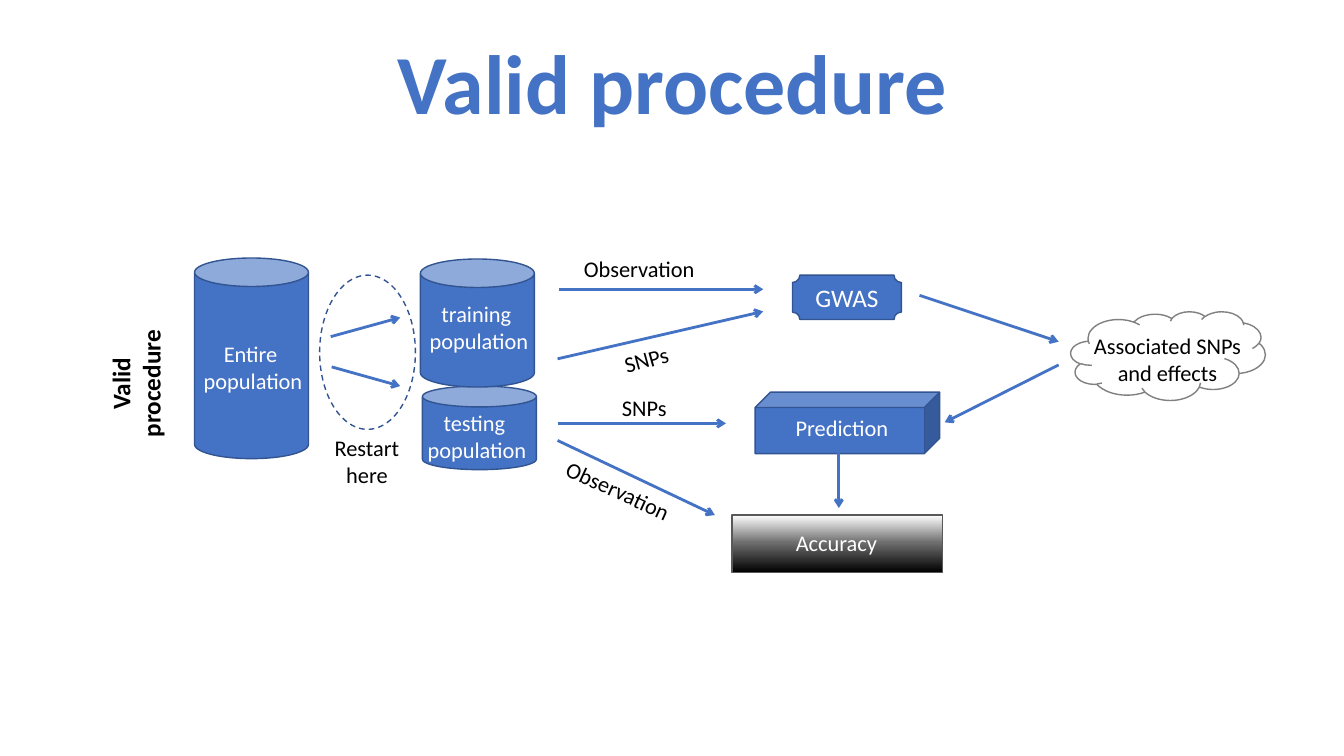
from copy import deepcopy
from dataclasses import dataclass

from pptx import Presentation
from pptx.dml.color import RGBColor
from pptx.enum.dml import MSO_LINE as Dash
from pptx.enum.shapes import MSO_CONNECTOR as Connector, MSO_SHAPE as Shape
from pptx.enum.text import MSO_ANCHOR as Anchor, MSO_AUTO_SIZE as AutoSize, PP_ALIGN as Align
from pptx.oxml.ns import qn
from pptx.oxml.xmlchemy import OxmlElement
from pptx.util import Inches, Pt


@dataclass(frozen=True)
class Theme:
    font: str = "Calibri"
    blue: str = "4472C4"
    outline: str = "325491"
    cloud_line: str = "808080"
    box_line: str = "595959"
    white: str = "FFFFFF"
    black: str = "000000"
    fade: tuple = ((0, "FFFFFF"), (0.48, "6E6E6E"), (1, "000000"))
    title: int = 60
    heading: int = 18
    label: int = 16
    arrow_width: int = 2
    outline_width: int = 1


def rgb(value):
    return RGBColor.from_string(value)


def apply(target, values):
    for name, value in values.items():
        setattr(target, name, value)


class Diagram:
    """Draws styled elements on the current slide."""

    def __init__(self, slide, theme):
        self.shapes = slide.shapes
        self.theme = theme

    def fill_text(self, frame, lines, color, size=None, bold=False, spacing=None, **frame_format):
        apply(frame, {"word_wrap": True, **frame_format})
        for index, line in enumerate(lines.split("\n")):
            paragraph = frame.add_paragraph() if index else frame.paragraphs[0]
            apply(paragraph, {"alignment": Align.CENTER, "line_spacing": spacing})
            run = paragraph.add_run()
            run.text = line
            apply(run.font, {"name": self.theme.font, "size": Pt(size or self.theme.label),
                             "bold": bold})
            run.font.color.rgb = rgb(color)

    def label(self, box, lines, color=None, rotation=0, **text_format):
        text_box = self.shapes.add_textbox(*map(Inches, box))
        text_box.rotation = rotation
        options = {"auto_size": AutoSize.SHAPE_TO_FIT_TEXT, **text_format}
        self.fill_text(text_box.text_frame, lines, color or self.theme.black, **options)

    def shape(self, kind, box, fill=None, line=None, dash=None):
        """Without a fill colour the shape stays see-through."""
        shape = self.shapes.add_shape(kind, *map(Inches, box))
        shape.shadow.inherit = False
        if fill:
            shape.fill.solid()
            shape.fill.fore_color.rgb = rgb(fill)
        else:
            shape.fill.background()
        shape.line.color.rgb = rgb(line or self.theme.outline)
        apply(shape.line, {"width": Pt(self.theme.outline_width), "dash_style": dash})
        return shape

    def fading_box(self, box):
        shape = self.shape(Shape.RECTANGLE, box, line=self.theme.box_line)
        shape.fill.gradient()
        shape.fill.gradient_angle = 270
        stop_list = shape.element.spPr.find(qn("a:gradFill")).find(qn("a:gsLst"))
        stop_list.append(deepcopy(stop_list[0]))
        for stop, (position, color) in zip(shape.fill.gradient_stops, self.theme.fade):
            stop.color.rgb = rgb(color)
            stop.position = position

    def arrow(self, start, end):
        arrow = self.shapes.add_connector(Connector.STRAIGHT, *map(Inches, start + end))
        arrow.line.color.rgb = rgb(self.theme.blue)
        arrow.line.width = Pt(self.theme.arrow_width)
        head = OxmlElement("a:tailEnd")
        head.set("type", "arrow")
        arrow.element.spPr.find(qn("a:ln")).append(head)
        arrow.element.spPr.append(OxmlElement("a:effectLst"))


def main():
    theme = Theme()
    deck = Presentation()
    apply(deck, {"slide_width": Inches(13.33), "slide_height": Inches(7.5)})
    diagram = Diagram(deck.slides.add_slide(deck.slide_layouts[6]), theme)

    populations = (
        ((4.19, 3.83, 1.13, 0.83), (3.88, 4.01), "testing \npopulation"),
        ((1.93, 2.56, 1.13, 1.99), (1.66, 3.33), "Entire \npopulation"),
        ((4.17, 2.57, 1.13, 1.27), (3.9, 2.93), "training \npopulation"),
    )
    for can, corner, name in populations:
        diagram.shape(Shape.CAN, can, theme.blue)
        diagram.label(corner + (1.7, 0.64), name, theme.white)

    diagram.shape(Shape.CLOUD, (10.62, 3.09, 1.93, 0.88), line=theme.cloud_line)
    diagram.label((10.73, 3.25, 1.7, 0.64), "Associated SNPs and effects")

    gwas = diagram.shape(Shape.PLAQUE, (7.86, 2.73, 1.08, 0.44), theme.blue)
    diagram.fill_text(gwas.text_frame, "GWAS", theme.white, theme.heading,
                      vertical_anchor=Anchor.MIDDLE)

    diagram.shape(Shape.CUBE, (7.49, 3.89, 1.83, 0.61), theme.blue)
    diagram.label((7.69, 4.06, 1.32, 0.37), "Prediction", theme.white)
    diagram.fading_box((7.26, 5.11, 2.09, 0.57))
    diagram.label((7.25, 5.2, 2.09, 0.37), "Accuracy", theme.white)

    flows = (
        ((3.28, 3.34), (3.97, 3.15)),
        ((3.29, 3.64), (3.97, 3.83)),
        ((5.54, 2.87), (7.57, 2.87)),
        ((5.53, 3.56), (7.57, 3.09)),
        ((5.53, 4.2), (7.2, 4.2)),
        ((5.53, 4.37), (7.09, 5.11)),
        ((9.12, 2.93), (10.5, 3.39)),
        ((10.5, 3.62), (9.37, 4.19)),
        ((8.32, 4.49), (8.32, 5.04)),
    )
    for start, end in flows:
        diagram.arrow(start, end)

    flow_labels = (
        ((5.68, 2.48, 1.32, 0.37), "Observation", 0),
        ((5.87, 3.38, 1.08, 0.37), "SNPs", 344.4),
        ((5.73, 3.86, 1.32, 0.37), "SNPs", 0),
        ((5.47, 4.68, 1.32, 0.37), "Observation", 24.6),
    )
    for box, name, rotation in flow_labels:
        diagram.label(box, name, rotation=rotation)

    diagram.shape(Shape.OVAL, (3.17, 2.73, 0.95, 1.53), dash=Dash.DASH)
    diagram.label((3.11, 4.26, 1.06, 0.64), "Restart\nhere")

    diagram.label((0.5, 3.45, 1.7, 0.71), "Valid procedure", rotation=270,
                  size=theme.heading, bold=True)
    diagram.label((2.17, 0, 9, 1.37), "Valid procedure", theme.blue, size=theme.title,
                  bold=True, spacing=0.9, auto_size=AutoSize.NONE,
                  vertical_anchor=Anchor.BOTTOM)

    deck.save("out.pptx")


if __name__ == "__main__":
    main()
